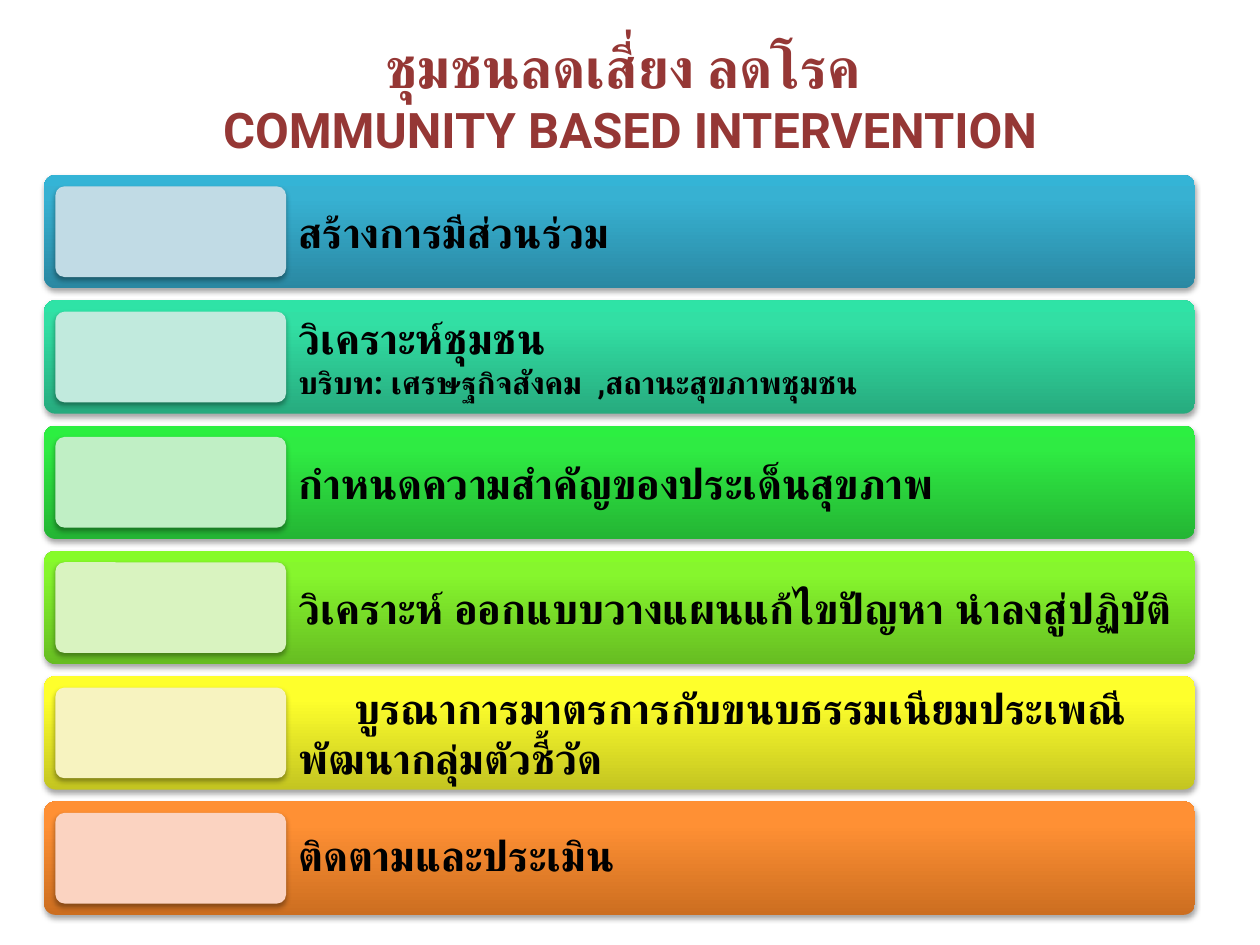
"""Build the slide on community based intervention steps."""
from copy import deepcopy

from lxml import etree
from pptx import Presentation
from pptx.dml.color import RGBColor
from pptx.enum import shapes, text
from pptx.oxml import ns
from pptx.util import Pt

FONT = "Roboto"
BLACK = RGBColor(0x00, 0x00, 0x00)
TITLE_RED = RGBColor(0x95, 0x37, 0x35)
BLUE = [RGBColor.from_string(c) for c in ("2A88A2", "37B1D2", "34B4D6", "C1DBE5")]
TEAL = [RGBColor.from_string(c) for c in ("27AB7E", "32DFA4", "2FE3A6", "C1EADD")]
GREEN = [RGBColor.from_string(c) for c in ("24B534", "2FEB43", "2CEF41", "C0EFC5")]
LIME = [RGBColor.from_string(c) for c in ("67BD22", "86F62D", "86FB29", "D9F3C0")]
YELLOW = [RGBColor.from_string(c) for c in ("C4C521", "FEFF2C", "FEFF2D", "F7F3C0")]
ORANGE = [RGBColor.from_string(c) for c in ("CC6E20", "FF9034", "FF9136", "FBD3C1")]

LEFT, CENTER = text.PP_ALIGN.LEFT, text.PP_ALIGN.CENTER
STEPS = [
    (BLUE, [("สร้างการมีส่วนร่วม", 24, LEFT)], 1),
    (TEAL, [("วิเคราะห์ชุมชน", 24, LEFT),
            ("บริบท: เศรษฐกิจสังคม  ,สถานะสุขภาพชุมชน", 18, LEFT)], 1),
    (GREEN, [("กำหนดความสำคัญของประเด็นสุขภาพ", 24, LEFT)], 1),
    (LIME, [("วิเคราะห์ ออกแบบวางแผนแก้ไขปัญหา นำลงสู่ปฏิบัติ", 24, LEFT)], 1),
    (YELLOW, [("บูรณาการมาตรการกับขนบธรรมเนียมประเพณี", 24, CENTER),
              ("พัฒนากลุ่มตัวชี้วัด", 24, LEFT)], 1),
    (ORANGE, [("ติดตามและประเมิน", 24, LEFT)], 0.9),
]
BAR_LEFT, BAR_TOP, BAR_WIDTH, BAR_HEIGHT, STEP = 25.2, 100, 657.6, 64.8, 71.6
TAB_INSET, TAB_WIDTH = 6.5, 131.8


def format_span(span, size, color):
    """Set the font of a run for Latin and Thai letters."""
    span.font.name = FONT
    span.font.size = Pt(size)
    span.font.bold = True
    span.font.color.rgb = color
    thai = etree.SubElement(span.font._element, ns.qn("a:cs"))
    thai.set("typeface", FONT)


def add_shadow(shape):
    """Give a shape a soft shadow that falls straight down."""
    shape.shadow.inherit = False
    effects = shape._element.spPr.find(ns.qn("a:effectLst"))
    shadow = etree.SubElement(
        effects, ns.qn("a:outerShdw"), blurRad=str(Pt(3.1)), dist=str(Pt(1.8)),
        dir="5400000", rotWithShape="0")
    color = etree.SubElement(shadow, ns.qn("a:srgbClr"), val="000000")
    etree.SubElement(color, ns.qn("a:alpha"), val="35000")


def add_panel(page, left, top, width, height):
    """Add a rounded rectangle without an outline."""
    panel = page.shapes.add_shape(
        shapes.MSO_SHAPE.ROUNDED_RECTANGLE, Pt(left), Pt(top), Pt(width), Pt(height))
    panel.adjustments[0] = 0.1
    panel.line.fill.background()
    add_shadow(panel)
    return panel


def fill_gradient(shape, colors):
    """Fill a shape with three colours from bottom to top."""
    shape.fill.gradient()
    shape.fill.gradient_angle = 90
    first = shape._element.spPr.find(".//" + ns.qn("a:gs"))
    first.addnext(deepcopy(first))
    for stop, position, color in zip(shape.fill.gradient_stops, (0, 0.8, 1), colors):
        stop.position = position
        stop.color.rgb = color


def add_label(page, top, lines, spacing):
    """Add the wording of a step beside its tab."""
    left = BAR_LEFT + TAB_INSET + TAB_WIDTH
    width = BAR_LEFT + BAR_WIDTH - left
    box = page.shapes.add_textbox(Pt(left), Pt(top), Pt(width), Pt(BAR_HEIGHT))
    frame = box.text_frame
    frame.word_wrap = True
    frame.vertical_anchor = text.MSO_ANCHOR.MIDDLE
    frame.margin_left = frame.margin_right = Pt(7.2)
    frame.margin_top = frame.margin_bottom = Pt(7.2)
    frame.text = "\n".join(line[0] for line in lines)
    for para, (_, size, alignment) in zip(frame.paragraphs, lines):
        para.alignment = alignment
        para.line_spacing = spacing
        format_span(para.runs[0], size, BLACK)


def add_step(page, index, colors, lines, spacing):
    """Add one bar with its pale tab and its wording."""
    top = BAR_TOP + index * STEP
    bar = add_panel(page, BAR_LEFT, top, BAR_WIDTH, BAR_HEIGHT)
    fill_gradient(bar, colors[:3])
    add_label(page, top, lines, spacing)
    tab = add_panel(page, BAR_LEFT + TAB_INSET, top + TAB_INSET,
                    TAB_WIDTH, BAR_HEIGHT - 2 * TAB_INSET)
    tab.fill.solid()
    tab.fill.fore_color.rgb = colors[3]


def set_title(page):
    """Place and format the two-line title."""
    title = page.shapes.title
    title.left, title.top, title.width, title.height = Pt(36), Pt(9.4), Pt(648), Pt(90)
    frame = title.text_frame
    frame.text = "ชุมชนลดเสี่ยง ลดโรค \vCOMMUNITY BASED INTERVENTION"
    frame.vertical_anchor = text.MSO_ANCHOR.MIDDLE
    para = frame.paragraphs[0]
    para.alignment = CENTER
    for span, size in zip(para.runs, (32, 28)):
        format_span(span, size, TITLE_RED)


def main():
    """Build and save the deck."""
    deck = Presentation()
    deck.slide_width, deck.slide_height = Pt(720), Pt(540)
    page = deck.slides.add_slide(deck.slide_layouts[5])
    for index, (colors, lines, spacing) in enumerate(STEPS):
        add_step(page, index, colors, lines, spacing)
    set_title(page)
    deck.save("out.pptx")


if __name__ == "__main__":
    main()
